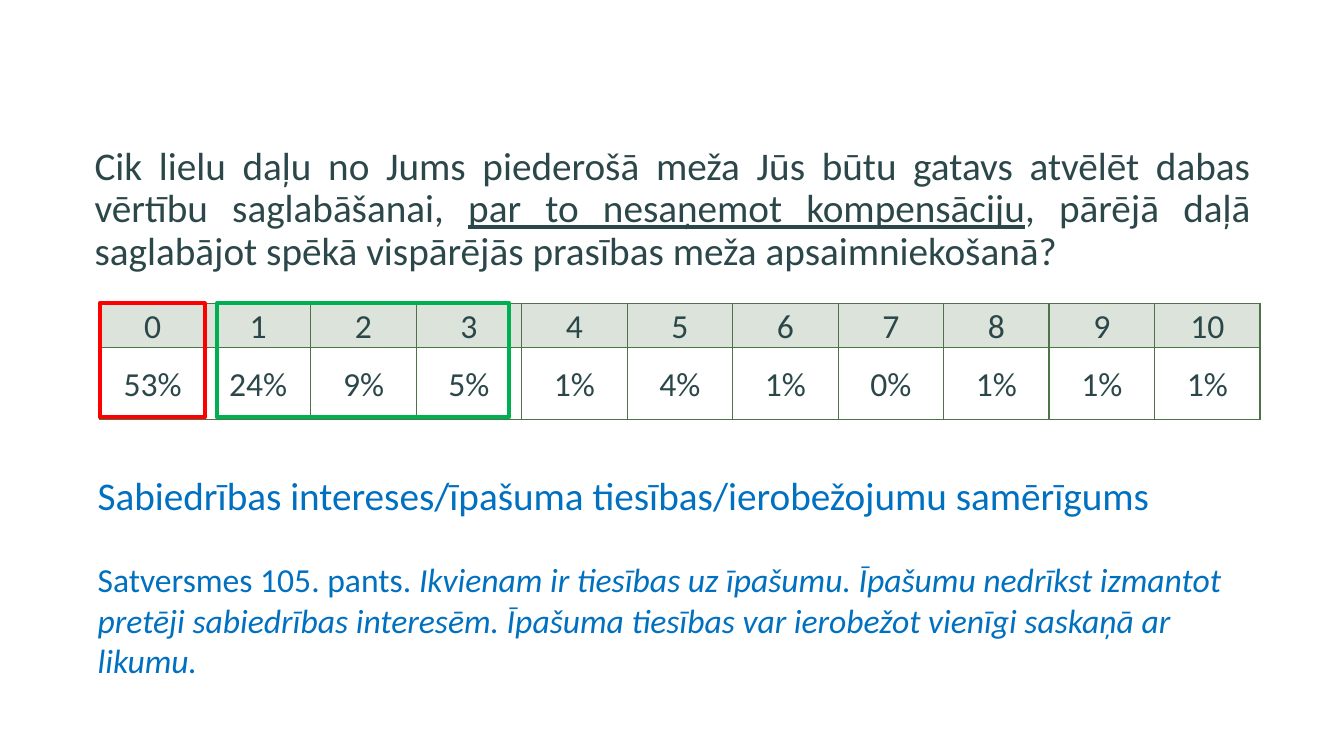
from dataclasses import dataclass

from lxml import etree
from pptx import Presentation
from pptx import util as u
from pptx.dml.color import RGBColor
from pptx.enum import shapes, text
from pptx.oxml import ns

PX = 9144  # 100 px to the inch
FONT = "Calibri"
INK = RGBColor(0x2C, 0x47, 0x49)
FOREST = RGBColor(0x4F, 0x73, 0x48)
BLUE = RGBColor(0x00, 0x70, 0xC0)
RED = RGBColor(0xFF, 0x00, 0x00)
GREEN = RGBColor(0x00, 0xB0, 0x50)

SHARES = ["53%", "24%", "9%", "5%", "1%", "4%", "1%", "0%", "1%", "1%", "1%"]
ROW_HEIGHTS = [35, 72]


def px(count: int) -> u.Emu:
    return u.Emu(count * PX)


@dataclass
class Area:
    left: int
    top: int
    width: int
    height: int

    def emu(self) -> list:
        return [px(n) for n in (self.left, self.top, self.width, self.height)]


@dataclass
class Span:
    words: str
    size: int
    color: RGBColor
    underline: bool = False
    italic: bool = False


@dataclass
class Para:
    spans: list[Span]
    format: dict


@dataclass
class TextBlock:
    area: Area
    anchor: text.MSO_ANCHOR
    paras: list[Para]


@dataclass
class Highlight:
    area: Area
    color: RGBColor


TABLE_AREA = Area(99, 301, 1151, sum(ROW_HEIGHTS))

QUESTION = TextBlock(Area(84, 130, 1166, 157), text.MSO_ANCHOR.MIDDLE, [
    Para([
        Span("Cik lielu daļu no Jums piederošā meža Jūs būtu gatavs atvēlēt dabas "
             "vērtību saglabāšanai, ", 28, INK),
        Span("par to nesaņemot kompensāciju", 28, INK, underline=True),
        Span(", pārējā daļā saglabājot spēkā vispārējās prasības meža "
             "apsaimniekošanā?", 28, INK),
    ], {"alignment": text.PP_ALIGN.JUSTIFY, "line_spacing": 0.9}),
])

LAW = TextBlock(Area(87, 463, 1160, 219), text.MSO_ANCHOR.TOP, [
    Para([Span("Sabiedrības intereses/īpašuma tiesības/ierobežojumu samērīgums",
               28, BLUE)], {}),
    Para([
        Span("Satversmes 105. pants. ", 24, BLUE),
        Span("Ikvienam ir tiesības uz īpašumu. Īpašumu nedrīkst izmantot pretēji "
             "sabiedrības interesēm. Īpašuma tiesības var ierobežot vienīgi saskaņā "
             "ar likumu.", 24, BLUE, italic=True),
    ], {"space_before": u.Pt(29)}),
])

HIGHLIGHTS = [
    Highlight(Area(99, 301, 104, 113), RED),
    Highlight(Area(215, 301, 290, 113), GREEN),
]


def apply(target, values: dict) -> None:
    for name, value in values.items():
        setattr(target, name, value)


def write_para(para, content: Para) -> None:
    apply(para, content.format)
    for item in content.spans:
        span = para.add_run()
        span.text = item.words
        apply(span.font, {"name": FONT, "size": u.Pt(item.size),
                          "underline": item.underline, "italic": item.italic})
        span.font.color.rgb = item.color


def add_text(page, block: TextBlock) -> None:
    frame = page.shapes.add_textbox(*block.area.emu()).text_frame
    apply(frame, {"word_wrap": True, "vertical_anchor": block.anchor})
    for index, content in enumerate(block.paras):
        para = frame.add_paragraph() if index else frame.paragraphs[0]
        write_para(para, content)


def add_borders(cell) -> None:
    properties = cell._tc.get_or_add_tcPr()
    for side in ("a:lnL", "a:lnR", "a:lnT", "a:lnB"):
        line = etree.SubElement(properties, ns.qn(side), w=str(u.Pt(1)))
        fill = etree.SubElement(line, ns.qn("a:solidFill"))
        etree.SubElement(fill, ns.qn("a:srgbClr"), val=str(FOREST))


def fill_cell(cell, is_header: bool) -> None:
    if not is_header:
        cell.fill.background()
        return
    cell.fill.solid()
    cell.fill.fore_color.rgb = FOREST
    color = cell._tc.tcPr.find(ns.qn("a:solidFill")).find(ns.qn("a:srgbClr"))
    etree.SubElement(color, ns.qn("a:alpha"), val="20000")


def add_share_table(page) -> None:
    rows = [[str(n) for n in range(len(SHARES))], SHARES]
    table = page.shapes.add_table(len(rows), len(SHARES), *TABLE_AREA.emu()).table
    apply(table, {"first_row": False, "horz_banding": False})
    for column in table.columns:
        column.width = px(TABLE_AREA.width) // len(SHARES)
    para_format = {"alignment": text.PP_ALIGN.CENTER, "line_spacing": 1.07,
                   "space_after": u.Pt(2)}
    for r, values in enumerate(rows):
        table.rows[r].height = px(ROW_HEIGHTS[r])
        anchor = text.MSO_ANCHOR.MIDDLE if r else text.MSO_ANCHOR.TOP
        for c, value in enumerate(values):
            cell = table.cell(r, c)
            apply(cell, {"margin_left": px(7), "margin_right": px(7),
                         "margin_top": 0, "margin_bottom": 0,
                         "vertical_anchor": anchor})
            add_borders(cell)
            fill_cell(cell, is_header=r == 0)
            write_para(cell.text_frame.paragraphs[0],
                       Para([Span(value, 24, INK)], para_format))


def add_highlight(page, mark: Highlight) -> None:
    box = page.shapes.add_shape(shapes.MSO_SHAPE.RECTANGLE, *mark.area.emu())
    box.shadow.inherit = False
    box.fill.background()
    box.line.color.rgb = mark.color
    box.line.width = u.Pt(3)


def main() -> None:
    deck = Presentation()
    apply(deck, {"slide_width": px(1333), "slide_height": px(750)})
    page = deck.slides.add_slide(deck.slide_layouts[6])

    # Survey answers
    add_share_table(page)
    # Survey question
    add_text(page, QUESTION)
    # Frames around the key answers
    for mark in HIGHLIGHTS:
        add_highlight(page, mark)
    # Legal conclusion
    add_text(page, LAW)

    deck.save("out.pptx")


if __name__ == "__main__":
    main()
